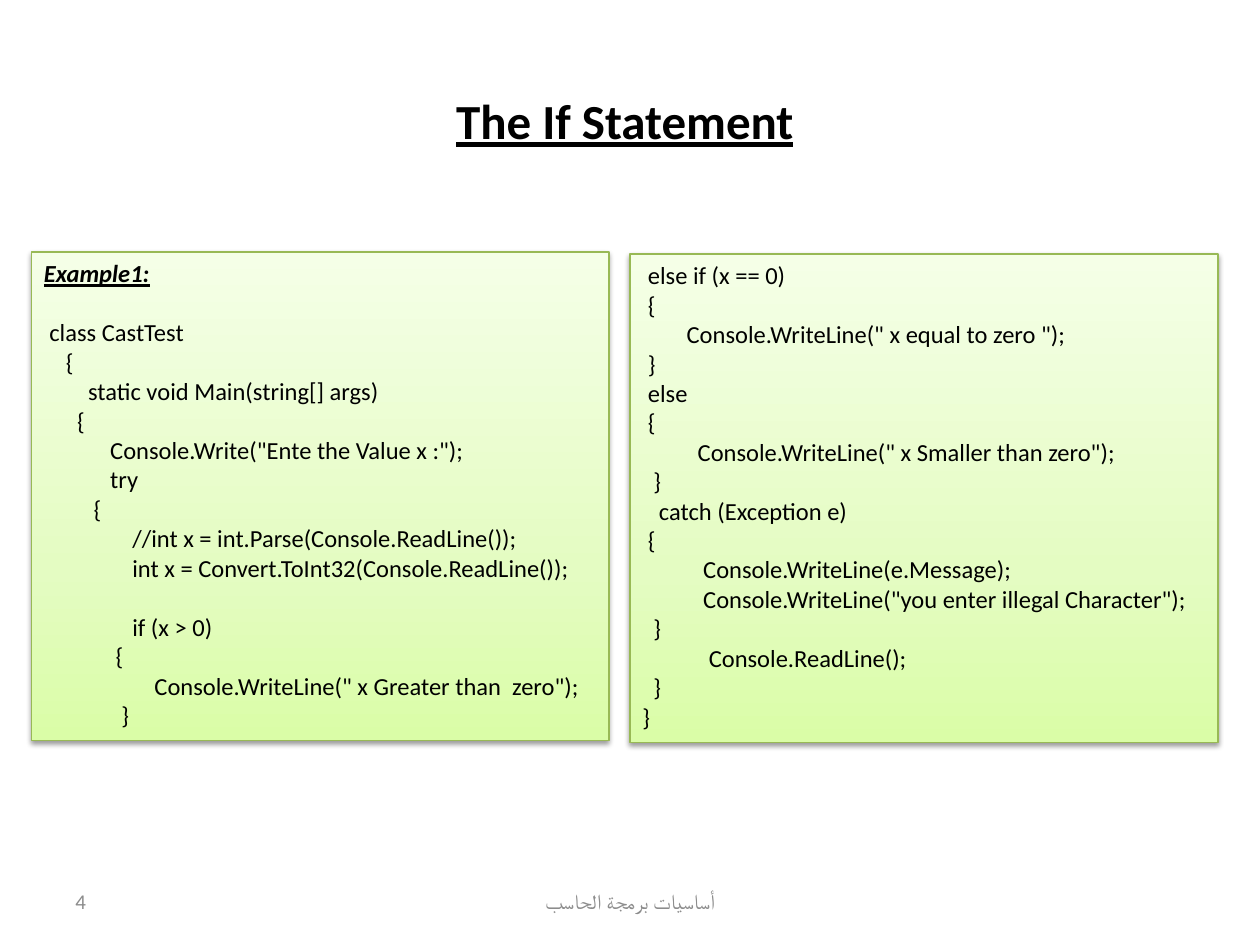
from lxml.etree import SubElement as Sub
from pptx import Presentation
from pptx.dml.color import RGBColor as Rgb
from pptx.enum.shapes import MSO_SHAPE as Kind
from pptx.enum.text import MSO_ANCHOR as Anchor, PP_ALIGN as Align
from pptx.oxml.ns import qn
from pptx.util import Pt

COLORS = {"ink": "000000", "gray": "8C8C8C", "edge": "98B955",
          "low": "DAFDA7", "mid": "E4FCC2", "high": "F5FFE7"}
FADE = [(0, "low"), (35, "mid"), (100, "high")]
SPACE = 3.16  # width of one blank at 14 pt
LINE = 17     # height of one line at 14 pt

# Code lines: indent in blanks, text, blank lines above
LEFT = [
    (1, "class CastTest", 1),
    (4, "{", 0),
    (8, "static void Main(string[] args)", 0),
    (6, "{", 0),
    (12, 'Console.Write("Ente the Value x :");', 0),
    (12, "try", 0),
    (9, "{", 0),
    (16, "//int x = int.Parse(Console.ReadLine());", 0),
    (16, "int x = Convert.ToInt32(Console.ReadLine());", 0),
    (16, "if (x > 0)", 1),
    (13, "{", 0),
    (20, 'Console.WriteLine(" x Greater than  zero");', 0),
    (14, "}", 0),
]
RIGHT = [
    (1, "else if (x == 0)", 0),
    (1, "{", 0),
    (8, 'Console.WriteLine(" x equal to zero ");', 0),
    (1, "}", 0),
    (1, "else", 0),
    (1, "{", 0),
    (10, 'Console.WriteLine(" x Smaller than zero");', 0),
    (2, "}", 0),
    (3, "catch (Exception e)", 0),
    (1, "{", 0),
    (11, "Console.WriteLine(e.Message);", 0),
    (11, 'Console.WriteLine("you enter illegal Character");', 0),
    (2, "}", 0),
    (12, "Console.ReadLine();", 0),
    (2, "}", 0),
    (0, "}", 0),
]


class Deck:
    face = "Calibri"

    def __init__(self, wide, high):
        self.prs = Presentation()
        self.prs.slide_width, self.prs.slide_height = Pt(wide), Pt(high)
        self.slide = self.prs.slides.add_slide(self.prs.slide_layouts[5])

    def style(self, para, size, color="ink", align=Align.LEFT, bold=False):
        para.alignment = align
        font = para.font
        font.name, font.size, font.bold = self.face, Pt(size), bold
        font.color.rgb = Rgb.from_string(COLORS[color])
        return font

    def title(self, text, x, y, w, h):
        box = self.slide.shapes.title
        box.left, box.top, box.width, box.height = map(Pt, (x, y, w, h))
        frame = box.text_frame
        frame.text, frame.word_wrap = text, False
        frame.vertical_anchor = Anchor.MIDDLE
        font = self.style(frame.paragraphs[0], 28, align=Align.CENTER, bold=True)
        font.underline = True

    def note(self, text, x, y, w, h, align, rtl=False):
        frame = self.slide.shapes.add_textbox(*map(Pt, (x, y, w, h))).text_frame
        frame.text, frame.word_wrap = text, True
        frame.vertical_anchor = Anchor.MIDDLE
        para = frame.paragraphs[0]
        self.style(para, 12, "gray", align)
        if rtl:
            para._p.get_or_add_pPr().set("rtl", "1")

    def panel(self, x, y, w, h):
        box = self.slide.shapes.add_shape(Kind.RECTANGLE, *map(Pt, (x, y, w, h)))
        box.line.color.rgb = Rgb.from_string(COLORS["edge"])
        box.line.width = Pt(0.75)
        # Gradient, from the bottom up
        box.fill.gradient()
        box.fill.gradient_angle = 90
        props = box._element.spPr
        stops = props.find(".//" + qn("a:gsLst"))
        for old in list(stops):
            stops.remove(old)
        for pos, name in FADE:
            stop = Sub(stops, qn("a:gs"), pos=str(pos * 1000))
            Sub(stop, qn("a:srgbClr"), val=COLORS[name])
        # Soft shadow below
        box.shadow.inherit = False
        cast = Sub(props.find(qn("a:effectLst")), qn("a:outerShdw"),
                   blurRad=str(Pt(3.1)), dist=str(Pt(1.6)),
                   dir="5400000", rotWithShape="0")
        tint = Sub(cast, qn("a:srgbClr"), val=COLORS["ink"])
        Sub(tint, qn("a:alpha"), val="38000")
        box.text_frame.word_wrap = True
        box.text_frame.vertical_anchor = Anchor.TOP
        return box.text_frame

    def code(self, lines, x, y, w, h, head=None):
        frame = self.panel(x, y, w, h)
        para = frame.paragraphs[0]
        if head:
            para.text = head
            font = self.style(para, 14, bold=True)
            font.italic = font.underline = True
            para = frame.add_paragraph()
        for i, (step, text, gap) in enumerate(lines):
            if i:
                para = frame.add_paragraph()
            para.text = text
            self.style(para, 14)
            para.space_before = Pt(gap * LINE)
            para._p.get_or_add_pPr().set("marL", str(Pt(step * SPACE)))


def main():
    deck = Deck(720, 540)
    # Footer and page number
    deck.note("أساسيات برمجة الحاسب", 246, 500.5, 228, 28.75, Align.CENTER, rtl=True)
    deck.note("4", 36, 500.5, 168, 28.75, Align.LEFT)
    # Code panels
    deck.code(LEFT, 18, 144, 330, 279, head="Example1:")
    deck.code(RIGHT, 360, 145.2, 336, 279)
    # Title
    deck.title("The If Statement", 252, 48, 210, 41)
    deck.prs.save("out.pptx")


if __name__ == "__main__":
    main()
